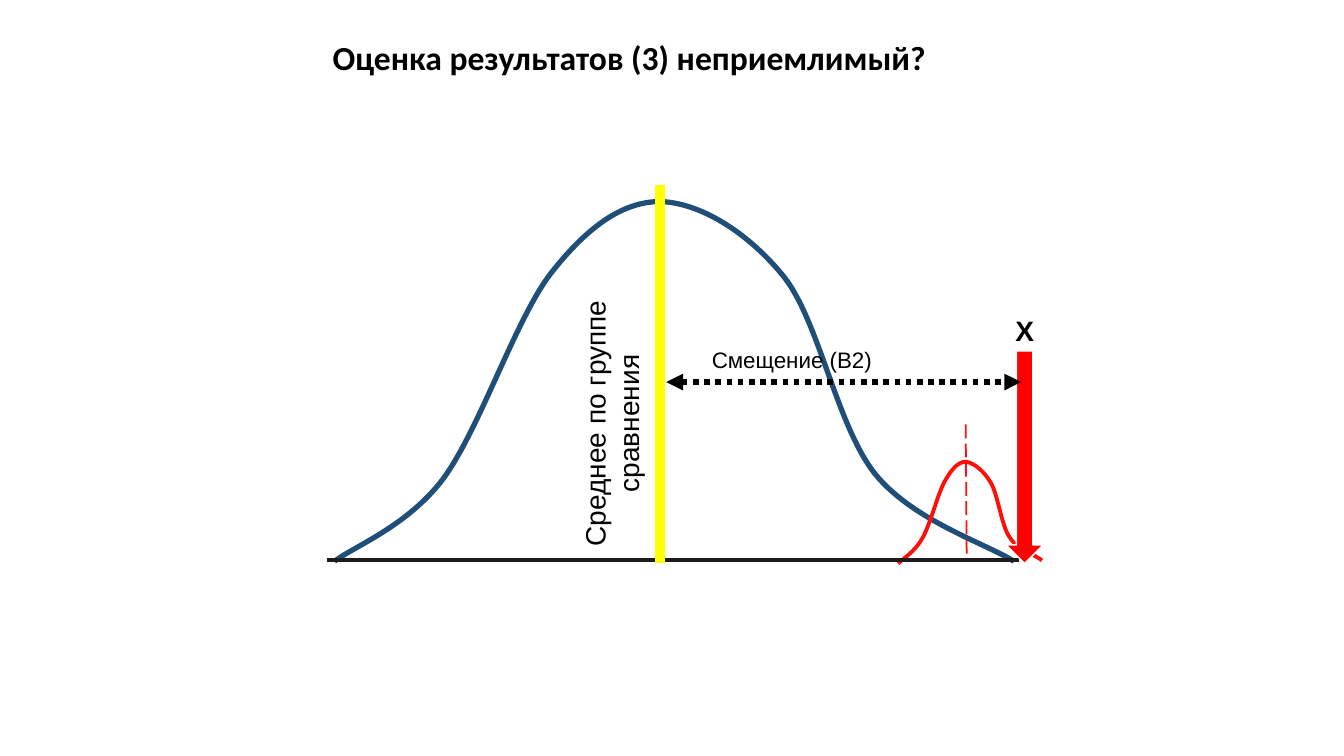
import pptx
import pptx.dml.color
import pptx.enum.dml
import pptx.enum.shapes
import pptx.enum.text
import pptx.oxml
import pptx.oxml.ns
import pptx.util

Pt = pptx.util.Pt
RGBColor = pptx.dml.color.RGBColor
Dash = pptx.enum.dml.MSO_LINE
Align = pptx.enum.text.PP_ALIGN
qn = pptx.oxml.ns.qn

BLACK = RGBColor(0x00, 0x00, 0x00)
WHITE = RGBColor(0xFF, 0xFF, 0xFF)
BLUE = RGBColor(0x44, 0x72, 0xC4)
NAVY = RGBColor(0x1F, 0x4E, 0x79)
BELL_RED = RGBColor(0xFE, 0x10, 0x0A)
RED = RGBColor(0xFF, 0x00, 0x00)
AXIS = RGBColor(0x1C, 0x1C, 0x1C)
YELLOW = RGBColor(0xFF, 0xFF, 0x00)

# Bezier points of the bells, relative to the plot box: start, then three per curve
GROUP_BELL = [
    (6, 269),
    (18.3, 259), (57.2, 244.6), (83.1, 210.7),
    (109, 176.2), (134.9, 97), (160.1, 63.8),
    (186, 30.7), (211.2, 12), (238.6, 12),
    (266.7, 12.7), (301.2, 33.6), (327.2, 66),
    (352.4, 98.4), (364.6, 171.8), (392, 206.4),
    (419.3, 240.2), (471.2, 256.1), (491.3, 269),
]
LAB_BELL = [
    (408.5, 270.5),
    (411.4, 267.6), (420.8, 261.8), (425.8, 252.5),
    (431.6, 242.4), (436.6, 221.5), (441.6, 212.2),
    (446.7, 202.8), (451.7, 197.8), (456.8, 197.8),
    (462.5, 198.5), (469.7, 204.2), (474.8, 212.9),
    (479.8, 221.5), (482, 241.7), (487.7, 251),
    (492.8, 260.4), (507.6, 264.7), (511.2, 268.3),
]


def add_run(p, text, size, font, bold=False):
    r = p.add_run()
    r.text = text
    r.font.size = Pt(size)
    r.font.name = font
    r.font.bold = bold
    r.font.color.rgb = BLACK


def add_line(slide, box, start, end, color, width, dash=None, arrows=False):
    x, y = box[:2]
    sp = slide.shapes.add_connector(
        pptx.enum.shapes.MSO_CONNECTOR.STRAIGHT,
        Pt(x + start[0]), Pt(y + start[1]), Pt(x + end[0]), Pt(y + end[1]))
    sp.line.color.rgb = color
    sp.line.width = Pt(width)
    if dash:
        sp.line.dash_style = dash
    if arrows:
        ln = sp.line._get_or_add_ln()
        for tag in ("a:headEnd", "a:tailEnd"):
            pptx.oxml.xmlchemy.OxmlElement(tag)
            end_mark = ln.makeelement(qn(tag), {"type": "triangle"})
            ln.append(end_mark)
    props = sp._element.spPr
    props.append(props.makeelement(qn("a:effectLst"), {}))


def add_bell(slide, box, points, color, width):
    pts = [(Pt(box[0] + x), Pt(box[1] + y)) for x, y in points]
    builder = slide.shapes.build_freeform(*pts[0], scale=1.0)
    builder.add_line_segments(pts[1:], close=False)
    sp = builder.convert_to_shape()
    sp.shadow.inherit = False
    sp.fill.background()
    sp.line.color.rgb = color
    sp.line.width = Pt(width)
    # Turn each three straight segments into one Bezier curve
    segments = list(sp._element.iter(qn("a:lnTo")))
    for i in range(0, len(segments), 3):
        curve = segments[i].makeelement(qn("a:cubicBezTo"), {})
        segments[i].addprevious(curve)
        for segment in segments[i:i + 3]:
            curve.append(segment[0])
            segment.getparent().remove(segment)


def add_label(slide, box, place, text, size, bold=False):
    left, top, width, height = place
    sp = slide.shapes.add_textbox(
        Pt(box[0] + left), Pt(box[1] + top), Pt(width), Pt(height))
    tf = sp.text_frame
    tf.word_wrap = True
    tf.auto_size = pptx.enum.text.MSO_AUTO_SIZE.SHAPE_TO_FIT_TEXT
    p = tf.paragraphs[0]
    p.alignment = Align.CENTER
    p.space_before = Pt(size / 2)
    add_run(p, text, size, "Arial", bold)
    return sp


def add_title(slide, box):
    sp = slide.shapes.title
    sp.left, sp.top, sp.width, sp.height = (Pt(v) for v in box)
    tf = sp.text_frame
    tf.word_wrap = False
    tf.auto_size = pptx.enum.text.MSO_AUTO_SIZE.SHAPE_TO_FIT_TEXT
    tf.vertical_anchor = pptx.enum.text.MSO_ANCHOR.TOP
    p = tf.paragraphs[0]
    p.alignment = Align.LEFT
    p.space_before = Pt(0)
    p.line_spacing = Pt(36.2)
    add_run(p, "Оценка результатов (3) неприемлимый?", 24, "Calibri", True)


def add_distributions(slide, box):
    # Bells with their means and the common axis
    mean, base = 238.6, 268.3
    add_line(slide, box, (237.9, 14.2), (239.3, 256.8), BLUE, 2, Dash.LONG_DASH)
    add_bell(slide, box, GROUP_BELL, NAVY, 3.75)
    add_bell(slide, box, LAB_BELL, BELL_RED, 2.75)
    add_line(slide, box, (456.8, 171.1), (457.5, 264), BELL_RED, 1.25, Dash.LONG_DASH)
    add_line(slide, box, (0.3, base), (494.9, base), AXIS, 3)
    add_line(slide, box, (mean, 0.5), (mean, 270.5), YELLOW, 7)


def add_annotations(slide, box):
    # Group mean, read from bottom to top
    sp = add_label(slide, box, (176, 30, 63.4, 235.4),
                   "Среднее по группе сравнения", 20)
    sp.rotation = 180
    sp.text_frame._txBody.bodyPr.set("vert", "eaVert")

    # Result arrow
    sp = slide.shapes.add_shape(
        pptx.enum.shapes.MSO_SHAPE.DOWN_ARROW,
        Pt(box[0] + 485.6), Pt(box[1] + 118.6), Pt(26.6), Pt(151.9))
    sp.adjustments[0] = 0.44
    sp.adjustments[1] = 0.5
    sp.shadow.inherit = False
    sp.fill.solid()
    sp.fill.fore_color.rgb = RED
    sp.line.color.rgb = WHITE
    sp.line.width = Pt(1)
    add_label(slide, box, (469.7, 88.3, 58.3, 31.7), "Х", 20, True)

    # Shift from the mean to the result
    add_line(slide, box, (242.9, 140.9), (496.4, 140.9), BLACK, 4,
             Dash.ROUND_DOT, arrows=True)
    add_label(slide, box, (244.4, 111.4, 176.4, 26.6), "Смещение (B2)", 16)


def main():
    prs = pptx.Presentation()
    prs.slide_width, prs.slide_height = Pt(960), Pt(540)
    slide = prs.slides.add_slide(prs.slide_layouts[5])
    plot = (233, 132)
    add_title(slide, (230.4, 15.1, 442.8, 41))
    add_distributions(slide, plot)
    add_annotations(slide, plot)
    prs.save("out.pptx")


if __name__ == "__main__":
    main()
